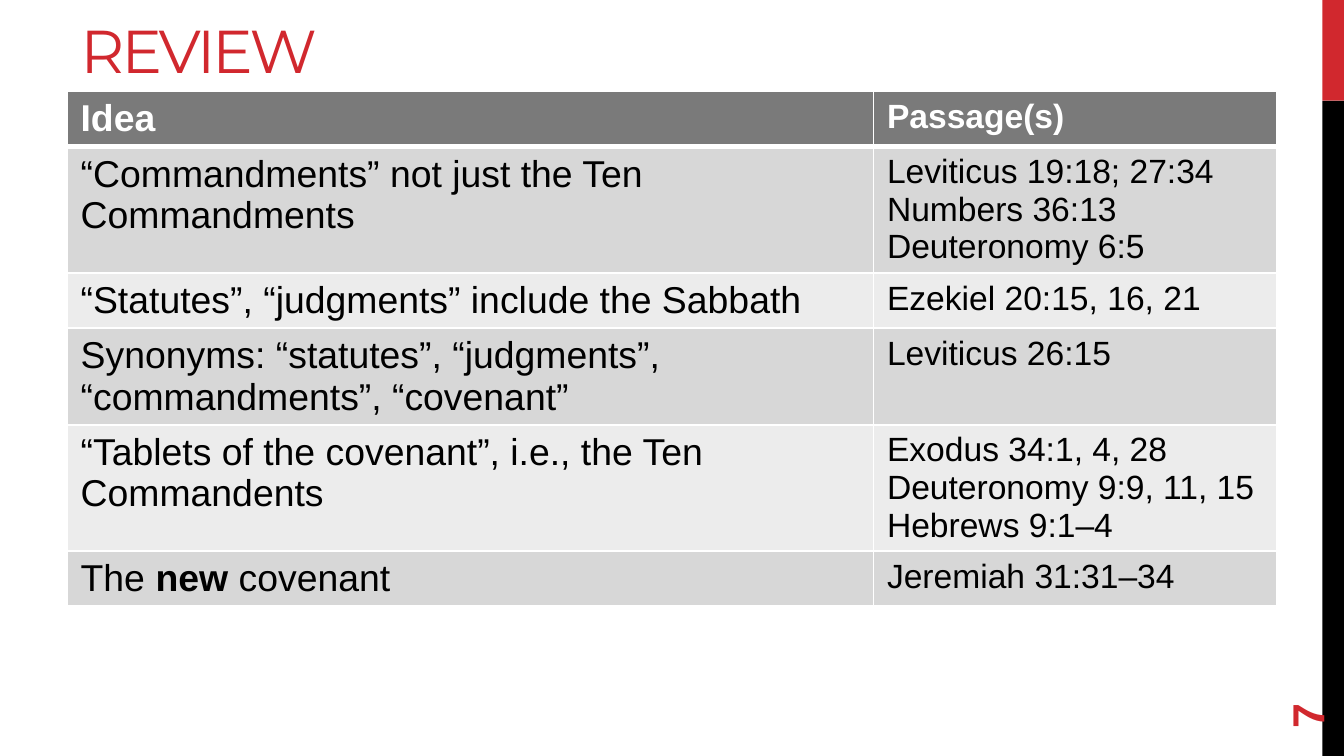
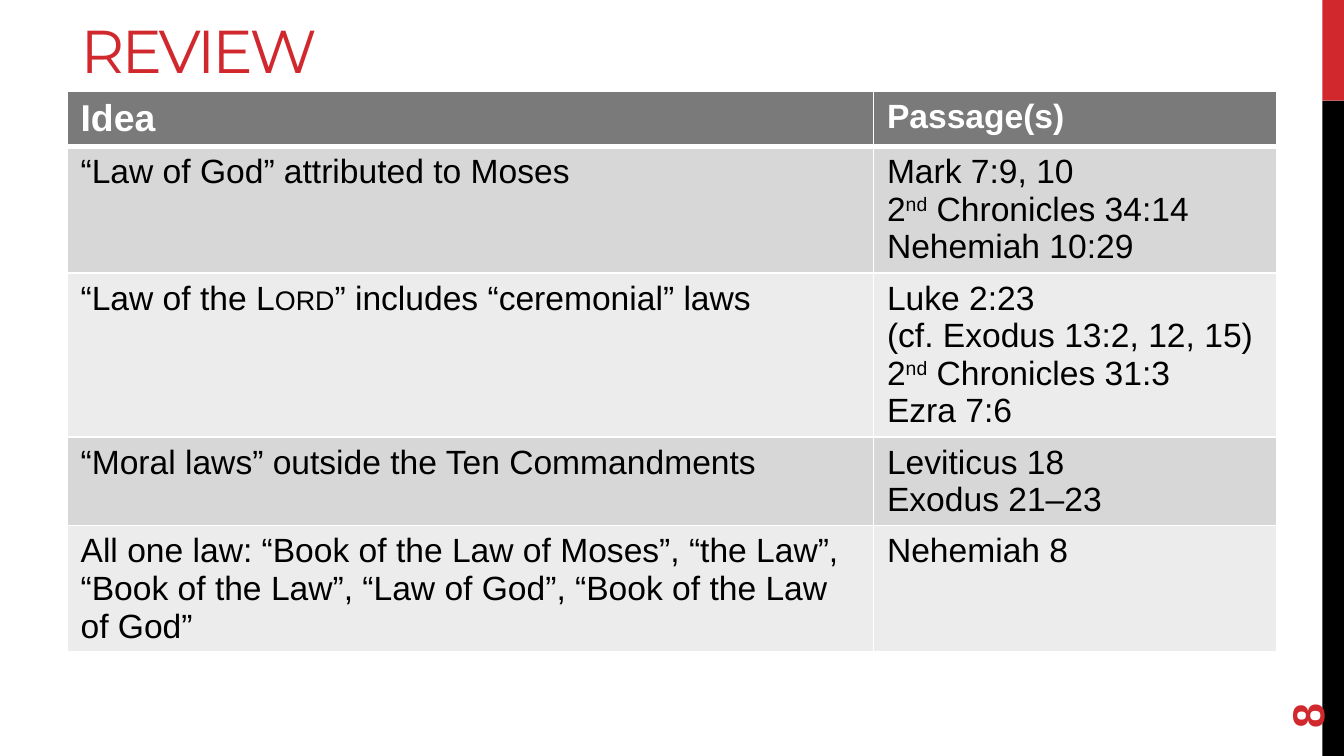
from dataclasses import dataclass, field
from typing import Any

from lxml.etree import SubElement
from pptx import Presentation
from pptx.dml.color import RGBColor
from pptx.enum.shapes import MSO_SHAPE
from pptx.enum.text import MSO_ANCHOR, MSO_AUTO_SIZE, PP_ALIGN
from pptx.oxml.ns import qn
from pptx.util import Inches, Pt

RED = RGBColor(0xD1, 0x28, 0x2E)
BLACK = RGBColor(0x00, 0x00, 0x00)
WHITE = RGBColor(0xFF, 0xFF, 0xFF)
HEADER_GRAY = RGBColor(0x7A, 0x7A, 0x7A)
BAND_GRAYS = (RGBColor(0xD7, 0xD7, 0xD7), RGBColor(0xEC, 0xEC, 0xEC))

TITLE_FORMAT = {"name": "Montserrat", "size": Pt(32.4), "bold": False}
NUMBER_FORMAT = {"name": "Arial", "size": Pt(24), "bold": True}
HEADER_FORMAT = {"name": "Arial", "bold": True}
BODY_FORMAT = {"name": "Arial", "bold": False}

SLIDE_WIDTH = Inches(10)
SLIDE_HEIGHT = SLIDE_WIDTH * 9 // 16
COLUMN_WIDTHS = (Inches(6), Inches(3))
ROW_HEIGHT = Inches(0.41)
PASSAGE_SIZE = 18
HEADER_SIZES = (20, PASSAGE_SIZE)


@dataclass(frozen=True)
class Run:
    text: str
    bold: bool = False
    attributes: dict[str, str] = field(default_factory=dict)


@dataclass(frozen=True)
class Band:
    top: float
    height: float
    color: RGBColor


@dataclass(frozen=True)
class Row:
    idea: tuple[Run, ...]
    passages: tuple[tuple[Run, ...], ...]


@dataclass(frozen=True)
class Review:
    number: int
    idea_size: int
    table_height: float
    rows: tuple[Row, ...]


def plain(*lines: str) -> tuple[tuple[Run, ...], ...]:
    return tuple((Run(line),) for line in lines)


def second(book: str) -> tuple[Run, ...]:
    return Run("2"), Run("nd", attributes={"baseline": "30000"}), Run(f" {book}")


def row(idea: str, *passages: str) -> Row:
    return Row((Run(idea),), plain(*passages))


BANDS = (Band(0, 0.75, RED), Band(0.75, 4.88, BLACK))

REVIEWS = (
    Review(7, 20, 4.07, (
        row("“Commandments” not just the Ten Commandments",
            "Leviticus 19:18; 27:34", "Numbers 36:13", "Deuteronomy 6:5"),
        row("“Statutes”, “judgments” include the Sabbath", "Ezekiel 20:15, 16, 21"),
        row("Synonyms: “statutes”, “judgments”, “commandments”, “covenant”",
            "Leviticus 26:15"),
        row("“Tablets of the covenant”, i.e., the Ten Commandents",
            "Exodus 34:1, 4, 28", "Deuteronomy 9:9, 11, 15", "Hebrews 9:1–4"),
        Row((Run("The "), Run("new", bold=True), Run(" covenant")),
            plain("Jeremiah 31:31–34")),
    )),
    Review(8, 18, 4.43, (
        Row((Run("“Law of God” attributed to Moses"),),
            (*plain("Mark 7:9, 10"), second("Chronicles 34:14"),
             *plain("Nehemiah 10:29"))),
        Row((Run("“Law of the "), Run("Lord", attributes={"cap": "small"}),
             Run("” includes “ceremonial” laws")),
            (*plain("Luke 2:23", "(cf. Exodus 13:2, 12, 15)"),
             second("Chronicles 31:3"), *plain("Ezra 7:6"))),
        row("“Moral laws” outside the Ten Commandments",
            "Leviticus 18", "Exodus 21–23"),
        row("All one law: “Book of the Law of Moses”, “the Law”, "
            "“Book of the Law”, “Law of God”, “Book of the Law of God”",
            "Nehemiah 8"),
    )),
)


def apply_format(target: Any, values: dict[str, Any]) -> None:
    for name, value in values.items():
        setattr(target, name, value)


def add_run(p: Any, run: Run, values: dict[str, Any], color: RGBColor) -> None:
    r = p.add_run()
    r.text = run.text
    apply_format(r.font, values)
    if run.bold:
        r.font.bold = True
    r.font.color.rgb = color
    for name, value in run.attributes.items():
        r._r.get_or_add_rPr().set(name, value)


def add_bands(prs: Any, slide: Any) -> None:
    for band in BANDS:
        sp = slide.shapes.add_shape(MSO_SHAPE.RECTANGLE, Inches(9.84), Inches(band.top),
                                    Inches(0.16), Inches(band.height))
        sp.shadow.inherit = False
        sp.fill.solid()
        sp.fill.fore_color.rgb = band.color
        sp.line.fill.background()
        prs.slide_master.shapes.element.append(sp.element)


def set_title(slide: Any, text: str) -> None:
    title = slide.shapes.title
    apply_format(title, {"left": Inches(0.5), "top": Inches(0.07),
                         "width": Inches(9), "height": Inches(0.6)})
    tf = title.text_frame
    apply_format(tf, {"auto_size": MSO_AUTO_SIZE.NONE, "word_wrap": True,
                      "vertical_anchor": MSO_ANCHOR.MIDDLE})
    p = tf.paragraphs[0]
    p.alignment = PP_ALIGN.LEFT
    add_run(p, Run(text, attributes={"spc": "-150"}), TITLE_FORMAT, RED)


def add_number(slide: Any, number: int) -> None:
    box = slide.shapes.add_textbox(Inches(9.18), Inches(4.78), Inches(1.08), Inches(0.4))
    box.rotation = 270
    tf = box.text_frame
    apply_format(tf, {"word_wrap": True, "vertical_anchor": MSO_ANCHOR.MIDDLE})
    add_run(tf.paragraphs[0], Run(str(number)), NUMBER_FORMAT, RED)


def add_borders(cell: Any, top: float, bottom: float) -> None:
    tcPr = cell._tc.get_or_add_tcPr()
    for side, width in (("L", 1), ("R", 1), ("T", top), ("B", bottom)):
        ln = SubElement(tcPr, qn(f"a:ln{side}"), w=str(Pt(width)))
        fill = SubElement(ln, qn("a:solidFill"))
        SubElement(fill, qn("a:srgbClr"), val=str(WHITE))


def fill_cell(cell: Any, lines: tuple[tuple[Run, ...], ...], size: int, index: int) -> None:
    header = index == 0
    add_borders(cell, 3 if index == 1 else 1, 3 if header else 1)
    cell.fill.solid()
    cell.fill.fore_color.rgb = HEADER_GRAY if header else BAND_GRAYS[(index - 1) % 2]
    values = {**(HEADER_FORMAT if header else BODY_FORMAT), "size": Pt(size)}
    tf = cell.text_frame
    for i, line in enumerate(lines):
        p = tf.add_paragraph() if i else tf.paragraphs[0]
        for run in line:
            add_run(p, run, values, WHITE if header else BLACK)


def add_review_table(slide: Any, review: Review) -> None:
    rows = (row("Idea", "Passage(s)"), *review.rows)
    frame = slide.shapes.add_table(len(rows), len(COLUMN_WIDTHS), Inches(0.5), Inches(0.68),
                                   sum(COLUMN_WIDTHS), ROW_HEIGHT * len(rows))
    table = frame.table
    for column, width in zip(table.columns, COLUMN_WIDTHS):
        column.width = width
    for index, content in enumerate(rows):
        sizes = (review.idea_size, PASSAGE_SIZE) if index else HEADER_SIZES
        for column, lines in enumerate(((content.idea,), content.passages)):
            fill_cell(table.cell(index, column), lines, sizes[column], index)
    frame.height = Inches(review.table_height)


def main() -> None:
    prs = Presentation()
    prs.slide_width, prs.slide_height = SLIDE_WIDTH, SLIDE_HEIGHT
    layout = prs.slide_layouts.get_by_name("Title Only")
    for i, review in enumerate(REVIEWS):
        slide = prs.slides.add_slide(layout)
        if i == 0:
            add_bands(prs, slide)
        set_title(slide, "REVIEW")
        add_review_table(slide, review)
        add_number(slide, review.number)
    prs.save("out.pptx")


if __name__ == "__main__":
    main()
